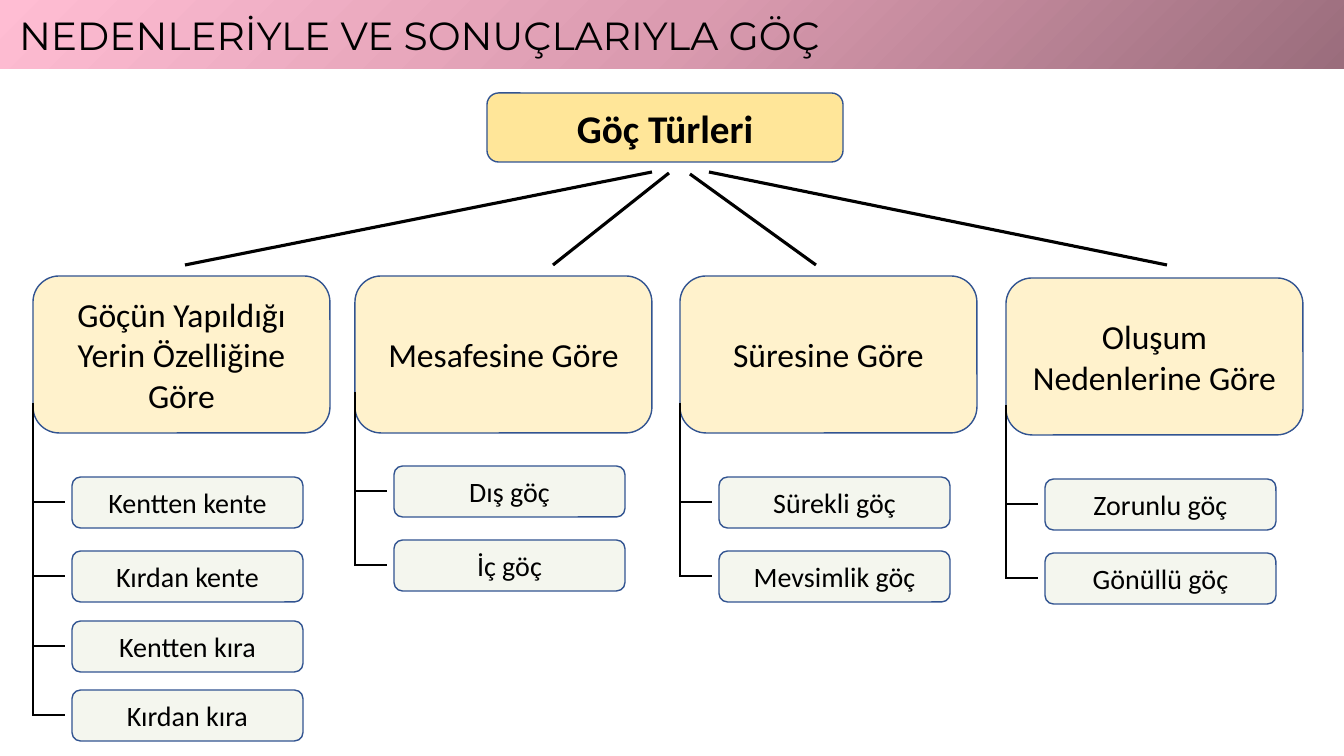
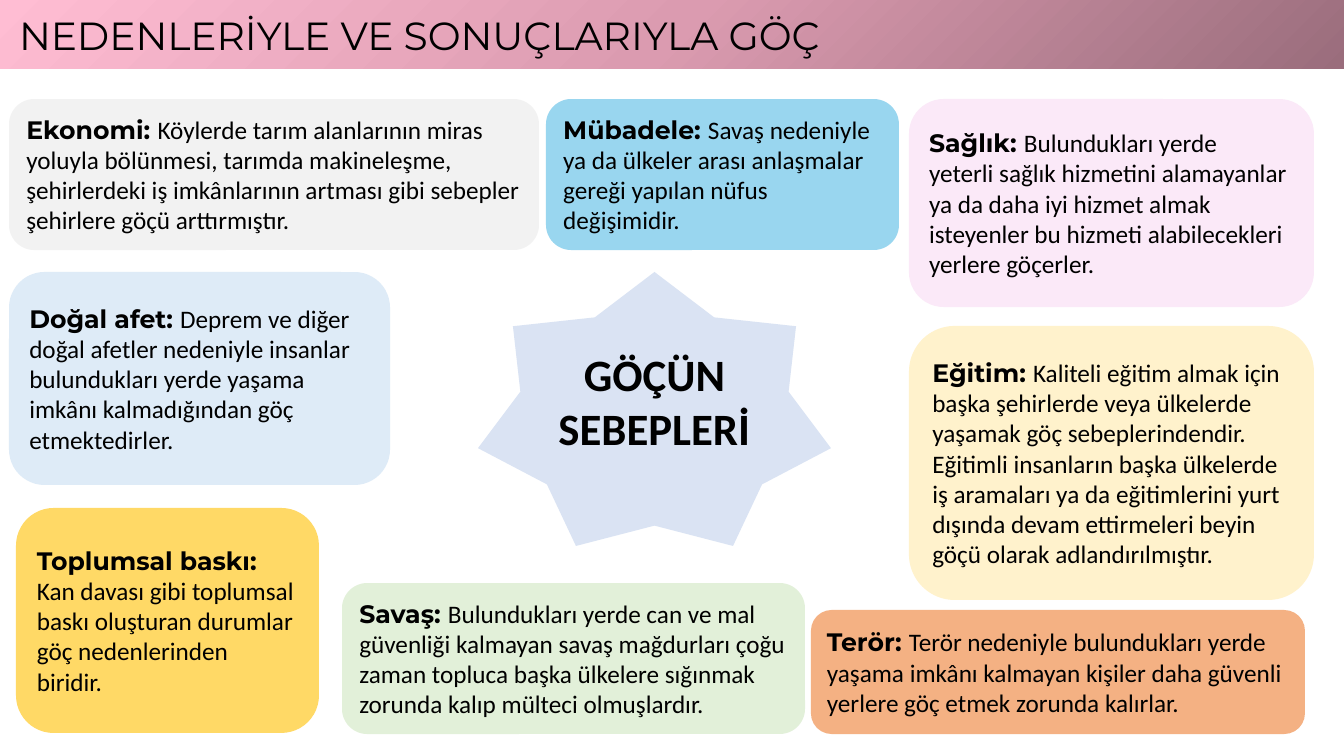
from lxml import etree
from pptx import Presentation
from pptx.dml.color import RGBColor
from pptx.enum.shapes import MSO_CONNECTOR, MSO_SHAPE
from pptx.enum.text import MSO_ANCHOR, MSO_AUTO_SIZE, PP_ALIGN
from pptx.oxml import parse_xml
from pptx.oxml.ns import qn
from pptx.util import Pt

ROUND, STAR = MSO_SHAPE.ROUNDED_RECTANGLE, MSO_SHAPE.STAR_7_POINT
LINE = MSO_CONNECTOR.STRAIGHT
LEFT, MID = PP_ALIGN.LEFT, PP_ALIGN.CENTER
MIDDLE, FIXED = MSO_ANCHOR.MIDDLE, MSO_AUTO_SIZE.NONE
WIDE, HIGH = 1344, 756
SCALE = 12192000 / WIDE
BODY, HEAD = "Calibri", "Montserrat"
TITLE = "NEDENLERİYLE VE SONUÇLARIYLA GÖÇ"
INK = {
    "text": "000000", "edge": "325491", "root": "FFE699",
    "branch": "FFF2CC", "leaf": "F4F6EE", "star": "DAE3F3",
    "gray": "F2F2F2", "blue": "99D6EF", "pink": "FBE9F8",
    "cream": "FFF2CC", "rust": "F4B183", "gold": "FFD966",
    "green": "E2F0D9", "sky": "DEEBF7",
}
BAND = [(0, "9A6D7C"), (50, "DB9BB0"), (100, "FFBDD3")]
FONTS = {
    "title": {"name": HEAD, "size": Pt(28), "bold": False},
    "root": {"name": BODY, "size": Pt(28), "bold": True},
    "branch": {"name": BODY, "size": Pt(24), "bold": False},
    "leaf": {"name": BODY, "size": Pt(20), "bold": False},
    "star": {"name": BODY, "size": Pt(32), "bold": True},
    "term": {"name": HEAD, "size": Pt(18), "bold": True},
    "note": {"name": BODY, "size": Pt(18), "bold": False},
}
SPOKES = [(652, 172, 185, 265), (669, 173, 553, 265),
          (690, 174, 816, 265), (709, 172, 1167, 265)]
KINDS = [
    ((33, 276), "Göçün Yapıldığı Yerin Özelliğine Göre",
     [("Kentten kente", 201), ("Kırdan kente", 275),
      ("Kentten kıra", 345), ("Kırdan kıra", 414)]),
    ((355, 276), "Mesafesine Göre", [("Dış göç", 190), ("İç göç", 264)]),
    ((680, 276), "Süresine Göre",
     [("Sürekli göç", 201), ("Mevsimlik göç", 275)]),
    ((1006, 278), "Oluşum Nedenlerine Göre",
     [("Zorunlu göç", 201), ("Gönüllü göç", 275)]),
]
CAUSES = [
    ((9, 99, 530, 151), "gray", "Ekonomi: ",
     "Köylerde tarım alanlarının miras yoluyla bölünmesi, tarımda "
     "makineleşme, şehirlerdeki iş imkânlarının artması gibi sebepler "
     "şehirlere göçü arttırmıştır."),
    ((546, 99, 353, 151), "blue", "Mübadele: ",
     "Savaş nedeniyle\nya da ülkeler arası anlaşmalar gereği yapılan "
     "nüfus\ndeğişimidir."),
    ((909, 99, 405, 208), "pink", "Sağlık: ",
     "Bulundukları yerde\nyeterli sağlık hizmetini alamayanlar\n"
     "ya da daha iyi hizmet almak\nisteyenler bu hizmeti alabilecekleri\n"
     "yerlere göçerler."),
    ((909, 326, 405, 274), "cream", "Eğitim: ",
     "Kaliteli eğitim almak için başka şehirlerde veya ülkelerde yaşamak "
     "göç sebeplerindendir. Eğitimli insanların başka ülkelerde iş "
     "aramaları ya da eğitimlerini yurt dışında devam ettirmeleri beyin "
     "göçü olarak adlandırılmıştır."),
    ((811, 610, 494, 124), "rust", "Terör: ",
     "Terör nedeniyle bulundukları yerde yaşama imkânı kalmayan kişiler "
     "daha güvenli yerlere göç etmek zorunda kalırlar."),
    ((16, 508, 303, 225), "gold", "Toplumsal baskı: ",
     "Kan davası gibi toplumsal baskı oluşturan durumlar göç "
     "nedenlerinden biridir."),
    ((342, 583, 463, 151), "green", "Savaş: ",
     "Bulundukları yerde can ve mal güvenliği kalmayan savaş mağdurları "
     "çoğu zaman topluca başka ülkelere sığınmak\n"
     "zorunda kalıp mülteci olmuşlardır."),
    ((9, 272, 381, 213), "sky", "Doğal afet: ",
     "Deprem ve diğer\ndoğal afetler nedeniyle insanlar\n"
     "bulundukları yerde yaşama\nimkânı kalmadığından göç\netmektedirler."),
]


def px(num):
    """Turn pixels into EMU."""
    return round(num * SCALE)


def rgb(key):
    """Look up a named colour."""
    return RGBColor.from_string(INK[key])


def write(para, text, style):
    """Add a run in a named style."""
    run = para.add_run()
    run.text = text
    for key, val in FONTS[style].items():
        setattr(run.font, key, val)
    run.font.color.rgb = rgb("text")


def block(slide, box, fill, edge=None, kind=ROUND):
    """Place a filled shape and return it."""
    shape = slide.shapes.add_shape(kind, *map(px, box))
    shape.shadow.inherit = False
    shape.fill.solid()
    shape.fill.fore_color.rgb = rgb(fill)
    if edge:
        shape.line.color.rgb = rgb(edge)
        shape.line.width = Pt(1)
    else:
        shape.line.fill.background()
    shape.text_frame.word_wrap = True
    return shape


def label(shape, text, style):
    """Write one centred text in a shape."""
    para = shape.text_frame.paragraphs[0]
    para.alignment = MID
    write(para, text, style)


def stroke(slide, ends, width=1):
    """Draw a plain black line."""
    line = slide.shapes.add_connector(LINE, *map(px, ends))
    line.line.color.rgb = rgb("text")
    line.line.width = Pt(width)
    etree.SubElement(line.element.spPr, qn("a:effectLst"))


def banner(slide):
    """Turn the title into the gradient band."""
    title = slide.shapes.title
    place = {"left": 0, "top": 0, "width": px(WIDE), "height": px(69)}
    for key, val in place.items():
        setattr(title, key, val)
    stops = "".join(
        f'<a:gs pos="{pos * 1000}"><a:srgbClr val="{tone}"/></a:gs>'
        for pos, tone in BAND)
    title.element.spPr.append(parse_xml(
        '<a:gradFill xmlns:a="http://schemas.openxmlformats.org/drawingml/'
        f'2006/main" rotWithShape="1"><a:gsLst>{stops}</a:gsLst>'
        '<a:lin ang="13500000" scaled="0"/></a:gradFill>'))
    frame = title.text_frame
    look = {"auto_size": FIXED, "word_wrap": True,
            "vertical_anchor": MIDDLE, "margin_left": px(19)}
    for key, val in look.items():
        setattr(frame, key, val)
    para = frame.paragraphs[0]
    para.alignment = LEFT
    para.line_spacing = 1.0
    write(para, TITLE, "title")


def branch(slide, spot, name, leaves):
    """Place a group box with its bracket of leaves."""
    left, top = spot
    label(block(slide, (left, top, 297, 157), "branch", "edge"),
          name, "branch")
    first, last = leaves[0][1], leaves[-1][1]
    stroke(slide, (left, top + first - 74, left, top + last + 26))
    for text, drop in leaves:
        mid = top + drop + 25
        stroke(slide, (left, mid, left + 32, mid))
        label(block(slide, (left + 39, top + drop, 231, 51),
                    "leaf", "edge"), text, "leaf")


def cause(slide, box, fill, term, note):
    """Place a card with a bold term and its note."""
    frame = block(slide, box, fill).text_frame
    for num, text in enumerate(note.split("\n")):
        para = frame.add_paragraph() if num else frame.paragraphs[0]
        para.alignment = LEFT
        if not num:
            write(para, term, "term")
        write(para, text, "note")


def tree(slide):
    """Build the tree of migration kinds."""
    label(block(slide, (487, 93, 356, 69), "root", "edge"),
          "Göç Türleri", "root")
    for ends in SPOKES:
        stroke(slide, ends, 2.25)
    for kind in KINDS:
        branch(slide, *kind)


def causes(slide):
    """Build the star with its cards."""
    star = block(slide, (478, 272, 353, 274), "star", kind=STAR)
    star.adjustments[0] = 0.38
    label(star, "GÖÇÜN SEBEPLERİ", "star")
    for card in CAUSES:
        cause(slide, *card)


def main():
    """Build and save the deck."""
    deck = Presentation()
    deck.slide_width, deck.slide_height = px(WIDE), px(HIGH)
    for build in (tree, causes):
        slide = deck.slides.add_slide(deck.slide_layouts[5])
        banner(slide)
        build(slide)
    deck.save("out.pptx")


if __name__ == "__main__":
    main()
